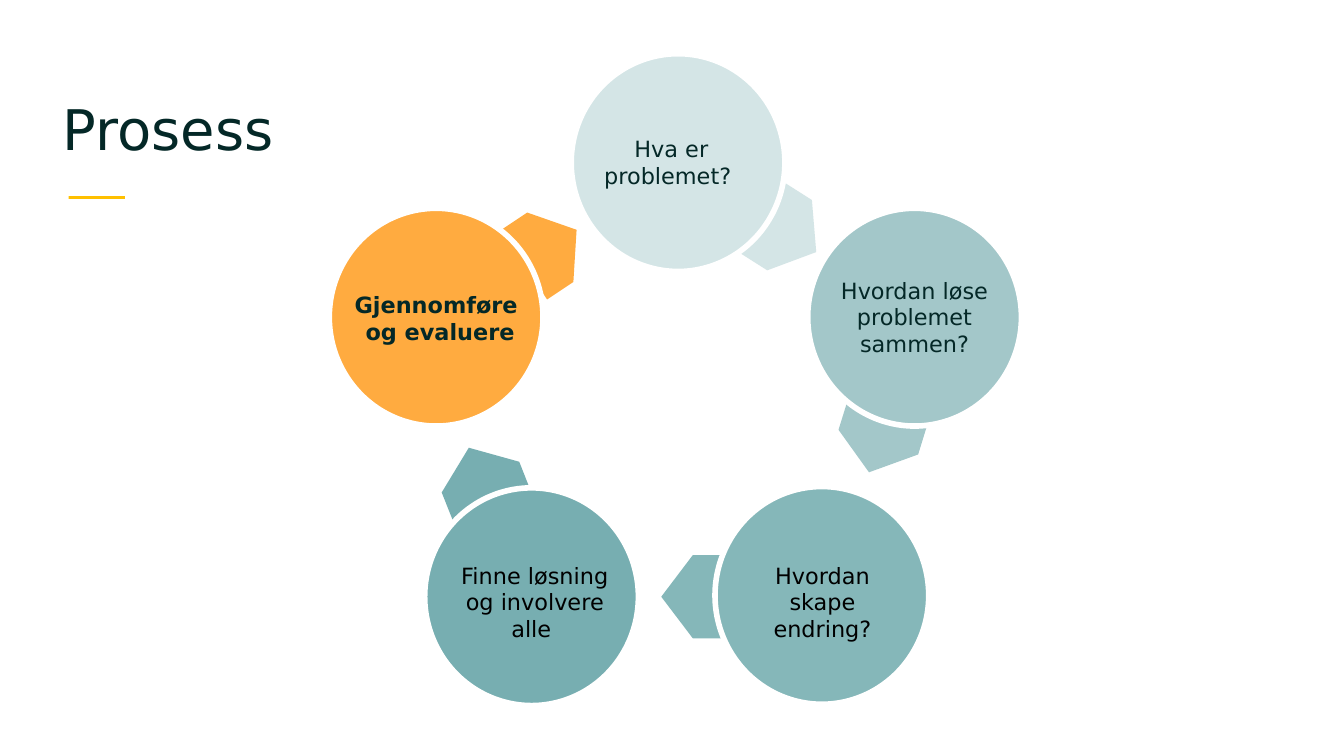
import copy
import dataclasses

import pptx
import pptx.dml.color
import pptx.enum.shapes
import pptx.enum.text
import pptx.oxml.ns
import pptx.util

Inches = pptx.util.Inches
Pt = pptx.util.Pt
SHAPE = pptx.enum.shapes.MSO_SHAPE
ALIGN = pptx.enum.text.PP_ALIGN
ANCHOR = pptx.enum.text.MSO_ANCHOR
FIT = pptx.enum.text.MSO_AUTO_SIZE


@dataclasses.dataclass(frozen=True)
class Theme:
    font: str = "DejaVu Sans"
    title_size: int = 30
    label_size: int = 12
    outline: int = 3
    white: str = "FFFFFF"
    black: str = "000000"
    ink: str = "042827"
    accent: str = "FFC000"
    orange: str = "FFAB40"
    teals: tuple = ("D4E5E6", "A3C7C9", "85B7B9", "77AEB1")


@dataclasses.dataclass(frozen=True)
class Step:
    text: str
    fill: str
    circle: tuple
    arrow: tuple
    rotation: float
    label: tuple
    color: str = Theme.ink
    bold: bool = False


THEME = Theme()
CIRCLE_SIZE = (1.59, 1.62)
ARROW_SIZE = (0.47, 0.62)

STEPS = [
    Step("Hva er problemet? ", THEME.teals[0],
         (4.25, 0.4), (5.64, 1.44), 32.4, (4.39, 0.96, 1.21, 0.5)),
    Step("Hvordan løse problemet sammen?", THEME.teals[1],
         (6.01, 1.55), (6.3, 2.98), 107.2, (6.07, 2.01, 1.47, 0.71)),
    Step("Hvordan skape endring?", THEME.teals[2],
         (5.32, 3.62), (4.92, 4.13), 180, (5.45, 4.13, 1.34, 0.71),
         color=THEME.black),
    Step("Finne løsning og involvere alle ", THEME.teals[3],
         (3.16, 3.63), (3.34, 3.24), 248.4, (3.28, 4.13, 1.4, 0.71),
         color=THEME.black),
    Step("Gjennomføre \vog evaluere", THEME.orange,
         (2.45, 1.55), (3.86, 1.53), 326.4, (2.48, 2.12, 1.59, 0.71),
         bold=True),
]


def rgb(value):
    return pptx.dml.color.RGBColor.from_string(value)


def add_shape(s, kind, box, fill, line=None, rotation=0):
    sp = s.shapes.add_shape(kind, *map(Inches, box))
    sp.shadow.inherit = False
    sp.rotation = rotation
    sp.fill.solid()
    sp.fill.fore_color.rgb = rgb(fill)
    if line:
        sp.line.color.rgb = rgb(line)
        sp.line.width = Pt(THEME.outline)
    else:
        sp.line.fill.background()


def add_text(s, text, box, size=THEME.label_size, color=THEME.ink, bold=False,
             align=ALIGN.CENTER, anchor=ANCHOR.TOP, fit=FIT.SHAPE_TO_FIT_TEXT,
             inset=0.05, spacing=None):
    tf = s.shapes.add_textbox(*map(Inches, box)).text_frame
    tf.word_wrap = True
    tf.auto_size = fit
    tf.vertical_anchor = anchor
    tf.margin_left = tf.margin_right = Inches(0.1)
    tf.margin_top = tf.margin_bottom = Inches(inset)
    p = tf.paragraphs[0]
    p.text = text
    p.alignment = align
    p.line_spacing = spacing
    for r in p.runs:
        r.font.name = THEME.font
        r.font.size = Pt(size)
        r.font.bold = bold
        r.font.color.rgb = rgb(color)
    for br in p._p.findall(pptx.oxml.ns.qn("a:br")):
        br.append(copy.deepcopy(p.runs[0]._r.rPr))


def add_cycle(s):
    for step in STEPS:
        add_shape(s, SHAPE.PENTAGON, step.arrow + ARROW_SIZE, step.fill,
                  rotation=step.rotation)
    for step in STEPS:
        add_shape(s, SHAPE.OVAL, step.circle + CIRCLE_SIZE, step.fill,
                  line=THEME.white)
    for step in STEPS:
        add_text(s, step.text, step.label, color=step.color, bold=step.bold)


def main():
    prs = pptx.Presentation()
    prs.slide_width = Inches(10)
    prs.slide_height = prs.slide_width * 9 // 16
    s = prs.slides.add_slide(prs.slide_layouts[6])
    add_shape(s, SHAPE.RECTANGLE, (0.51, 1.46, 0.42, 0.02), THEME.accent)
    add_text(s, "Prosess", (0.37, 0.38, 5.83, 0.93), size=THEME.title_size,
             align=ALIGN.LEFT, anchor=ANCHOR.BOTTOM, fit=FIT.NONE,
             inset=0.1, spacing=0.9)
    add_cycle(s)
    prs.save("out.pptx")


if __name__ == "__main__":
    main()
